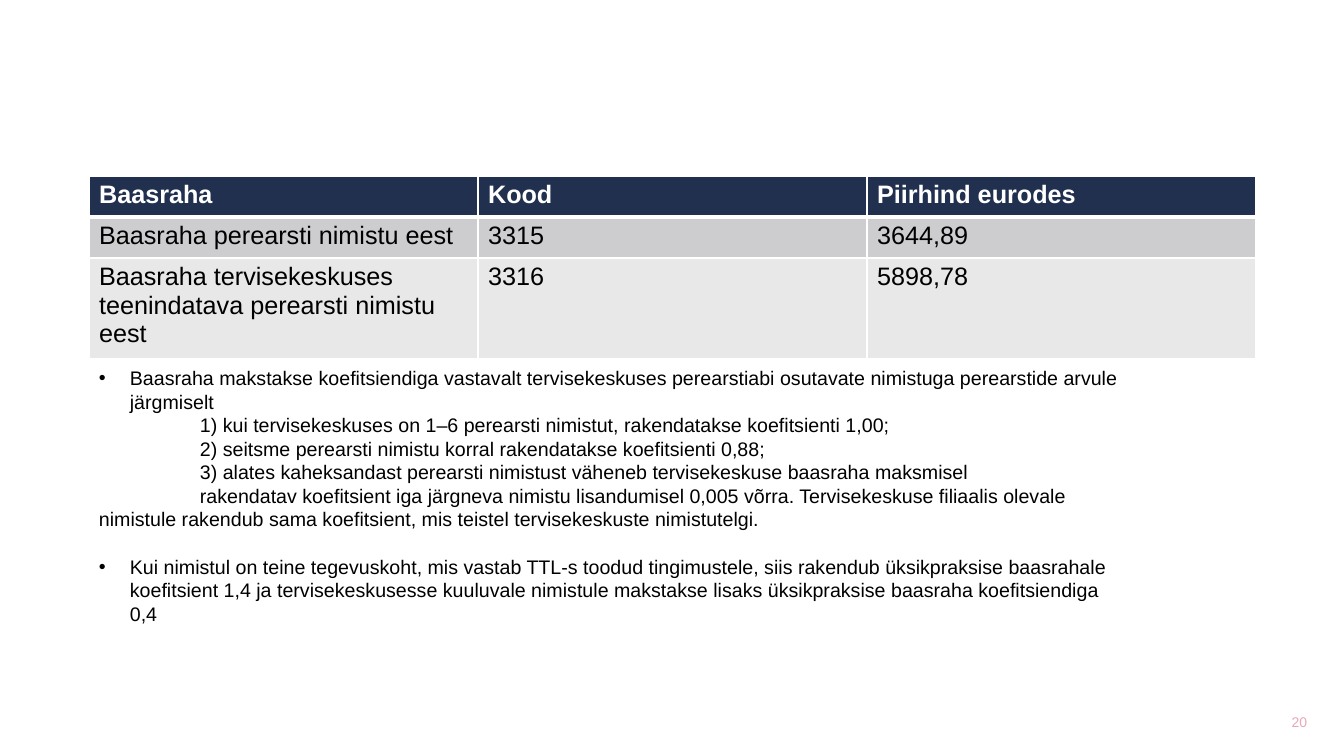
from pptx import Presentation
from pptx.dml.color import RGBColor
from pptx.enum.text import MSO_ANCHOR as Anchor, PP_ALIGN as Align
from pptx.util import Emu, Pt
from lxml.etree import SubElement as Sub
from pptx.oxml import parse_xml
from pptx.oxml.ns import nsdecls, qn

SCALE = 914400 / 100.8
NAVY = RGBColor(0x21, 0x30, 0x4F)
GREY = RGBColor(0xCD, 0xCD, 0xD0)
PALE = RGBColor(0xE8, 0xE8, 0xE9)
WHITE = RGBColor(0xFF, 0xFF, 0xFF)
BLACK = RGBColor(0, 0, 0)
PINK = RGBColor(0xEB, 0xA7, 0xB8)

ROWS = [
    ("Baasraha", "Kood", "Piirhind eurodes"),
    ("Baasraha perearsti nimistu eest", "3315", "3644,89"),
    ("Baasraha tervisekeskuses teenindatava perearsti nimistu eest",
     "3316", "5898,78"),
]
FILLS = [NAVY, GREY, PALE]

# (text, bulleted, points of space before)
NOTES = [
    ("Baasraha makstakse koefitsiendiga vastavalt tervisekeskuses "
     "perearstiabi osutavate nimistuga perearstide arvule järgmiselt", True, 0),
    ("\t1) kui tervisekeskuses on 1–6 perearsti nimistut, rakendatakse "
     "koefitsienti 1,00;", False, 0),
    ("\t2) seitsme perearsti nimistu korral rakendatakse koefitsienti 0,88;",
     False, 0),
    ("\t3) alates kaheksandast perearsti nimistust väheneb tervisekeskuse "
     "baasraha maksmisel", False, 0),
    ("\trakendatav koefitsient iga järgneva nimistu lisandumisel 0,005 võrra. "
     "Tervisekeskuse filiaalis olevale nimistule rakendub sama koefitsient, "
     "mis teistel tervisekeskuste nimistutelgi.", False, 0),
    ("Kui nimistul on teine tegevuskoht, mis vastab TTL-s toodud tingimustele, "
     "siis rakendub üksikpraksise baasrahale koefitsient 1,4 ja "
     "tervisekeskusesse kuuluvale nimistule makstakse lisaks üksikpraksise "
     "baasraha koefitsiendiga 0,4", True, 17),
]


def px(n):
    return Emu(round(n * SCALE))


class Deck:
    """Holds the style and the current slide."""

    font = "Arial"

    def __init__(self, wide, high):
        self.file = Presentation()
        self.file.slide_width, self.file.slide_height = px(wide), px(high)
        self.slide = self.file.slides.add_slide(self.file.slide_layouts[6])

    def run(self, para, text, size, color, bold=False):
        run = para.add_run()
        run.text = text
        font = run.font
        font.name, font.size, font.bold = self.font, Pt(size), bold
        font.color.rgb = color

    def bullet(self, para, indent):
        props = para._p.get_or_add_pPr()
        props.set("marL", str(px(indent)))
        props.set("indent", str(-px(indent)))
        Sub(props, qn("a:buFont")).set("typeface", self.font)
        Sub(props, qn("a:buChar")).set("char", "•")

    def tab(self, para, pos):
        """Set one left tab stop."""
        stops = Sub(para._p.get_or_add_pPr(), qn("a:tabLst"))
        stop = Sub(stops, qn("a:tab"))
        stop.set("pos", str(px(pos)))
        stop.set("algn", "l")

    def box(self, x, y, w, h):
        frame = self.slide.shapes.add_textbox(
            px(x), px(y), px(w), px(h)).text_frame
        frame.word_wrap = True
        return frame

    def notes(self, items, x, y, w, h):
        frame = self.box(x, y, w, h)
        for i, (text, dot, gap) in enumerate(items):
            para = frame.add_paragraph() if i else frame.paragraphs[0]
            para.space_before = Pt(gap)
            if dot:
                self.bullet(para, 31)
            else:
                self.tab(para, 101)
            self.run(para, text, 14, BLACK)

    def number(self, text, x, y, w, h):
        frame = self.box(x, y, w, h)
        frame.vertical_anchor = Anchor.MIDDLE
        para = frame.paragraphs[0]
        para.alignment = Align.CENTER
        self.run(para, text, 10, PINK)

    def border(self, cell, widths):
        """Draw white cell borders, given as side letter to points."""
        props = cell._tc.get_or_add_tcPr()
        for i, (side, width) in enumerate(widths.items()):
            props.insert(i, parse_xml(
                f'<a:ln{side} {nsdecls("a")} w="{Pt(width)}"><a:solidFill>'
                f'<a:srgbClr val="{WHITE}"/></a:solidFill></a:ln{side}>'))

    def table(self, rows, fills, x, y, width, highs):
        cols = len(rows[0])
        table = self.slide.shapes.add_table(
            len(rows), cols, px(x), px(y),
            px(width * cols), px(sum(highs))).table
        for col in table.columns:
            col.width = px(width)
        for r, (texts, fill, high) in enumerate(zip(rows, fills, highs)):
            table.rows[r].height = px(high)
            head = r == 0
            for c, text in enumerate(texts):
                cell = table.cell(r, c)
                cell.fill.solid()
                cell.fill.fore_color.rgb = fill
                self.border(cell, {"L": 1, "R": 1, "T": 3 if r == 1 else 1,
                                   "B": 3 if head else 1})
                self.run(cell.text_frame.paragraphs[0], text, 18,
                         WHITE if head else BLACK, head)

    def save(self):
        self.file.save("out.pptx")


def main():
    deck = Deck(1344, 756)
    deck.number("20", 1255, 687, 89, 69)
    deck.notes(NOTES, 89, 361, 1051, 278)
    deck.table(ROWS, FILLS, 89, 176, 389, [41, 41, 100])
    deck.save()


if __name__ == "__main__":
    main()
